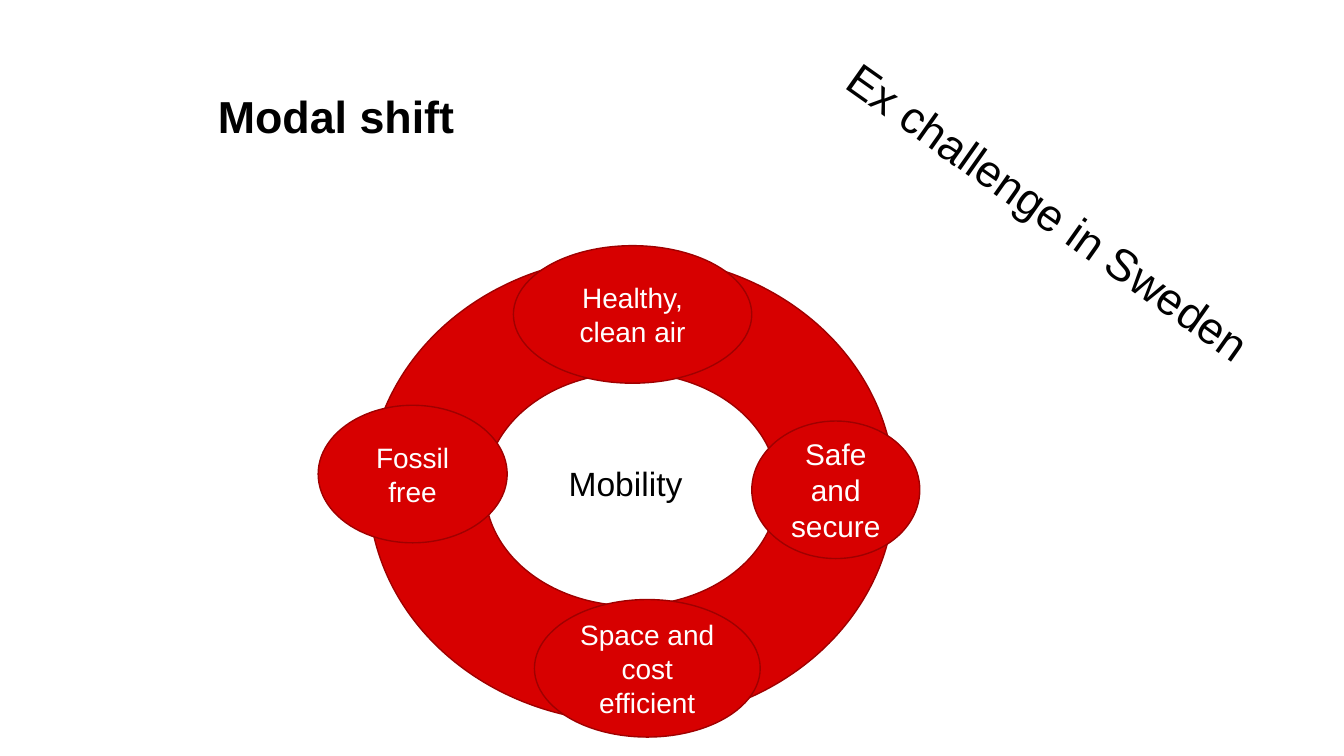
from dataclasses import dataclass

from pptx import Presentation
from pptx.dml.color import RGBColor
from pptx.enum.shapes import MSO_SHAPE
from pptx.enum.text import MSO_ANCHOR, PP_ALIGN
from pptx.util import Pt

EMU_PER_PX = 9525
DONUT, ELLIPSE = MSO_SHAPE.DONUT, MSO_SHAPE.OVAL
MIDDLE, CENTER = MSO_ANCHOR.MIDDLE, PP_ALIGN.CENTER


@dataclass(frozen=True)
class Theme:
    font: str = "Arial"
    red: RGBColor = RGBColor(0xD7, 0x00, 0x00)
    dark_red: RGBColor = RGBColor(0x9F, 0x00, 0x00)
    black: RGBColor = RGBColor(0x00, 0x00, 0x00)
    white: RGBColor = RGBColor(0xFF, 0xFF, 0xFF)
    heading: float = 32
    center: float = 24
    goal_large: float = 21.3
    goal: float = 20
    outline: float = 1


class SlideBuilder:
    def __init__(self, prs, theme):
        self.theme = theme
        self.slide = prs.slides.add_slide(prs.slide_layouts[6])

    def set_text(self, tf, text, size, color, bold=False):
        tf.text = text
        p = tf.paragraphs[0]
        font = p.runs[0].font
        font.name, font.size, font.bold = self.theme.font, Pt(size), bold
        font.color.rgb = color
        return p

    def label(self, box, text, size, bold=False, wrap=False, rotation=0, spacing=1.0):
        sp = self.slide.shapes.add_textbox(*map(px, box))
        sp.rotation = rotation
        sp.text_frame.word_wrap = wrap
        p = self.set_text(sp.text_frame, text, size, self.theme.black, bold)
        p.line_spacing = spacing

    def red_shape(self, kind, box):
        sp = self.slide.shapes.add_shape(kind, *map(px, box))
        sp.shadow.inherit = False
        sp.fill.solid()
        sp.fill.fore_color.rgb = self.theme.red
        sp.line.color.rgb = self.theme.dark_red
        sp.line.width = Pt(self.theme.outline)
        return sp

    def goal(self, box, text, size):
        tf = self.red_shape(ELLIPSE, box).text_frame
        tf.word_wrap = True
        tf.vertical_anchor = MIDDLE
        self.set_text(tf, text, size, self.theme.white).alignment = CENTER


def px(n):
    return n * EMU_PER_PX


def main():
    prs = Presentation()
    prs.slide_width, prs.slide_height = px(1280), px(720)
    theme = Theme()
    s = SlideBuilder(prs, theme)

    s.label((198, 86, 1179, 120), "Modal shift", theme.heading,
            bold=True, wrap=True, spacing=0.9)
    s.red_shape(DONUT, (351, 244, 501, 444))
    s.label((532, 436, 129, 48), "Mobility", theme.center)

    goal_height = 131
    for left, top, width, text, size in (
        (716, 401, 160, "Safe and secure", theme.goal_large),
        (509, 571, 215, "Space and cost efficient", theme.goal),
        (489, 234, 227, "Healthy, clean air", theme.goal),
        (303, 386, 180, "Fossil free", theme.goal),
    ):
        s.goal((left, top, width, goal_height), text, size)

    s.label((761, 172, 479, 61), "Ex challenge in Sweden", theme.heading, rotation=35.3)
    prs.save("out.pptx")


if __name__ == "__main__":
    main()
